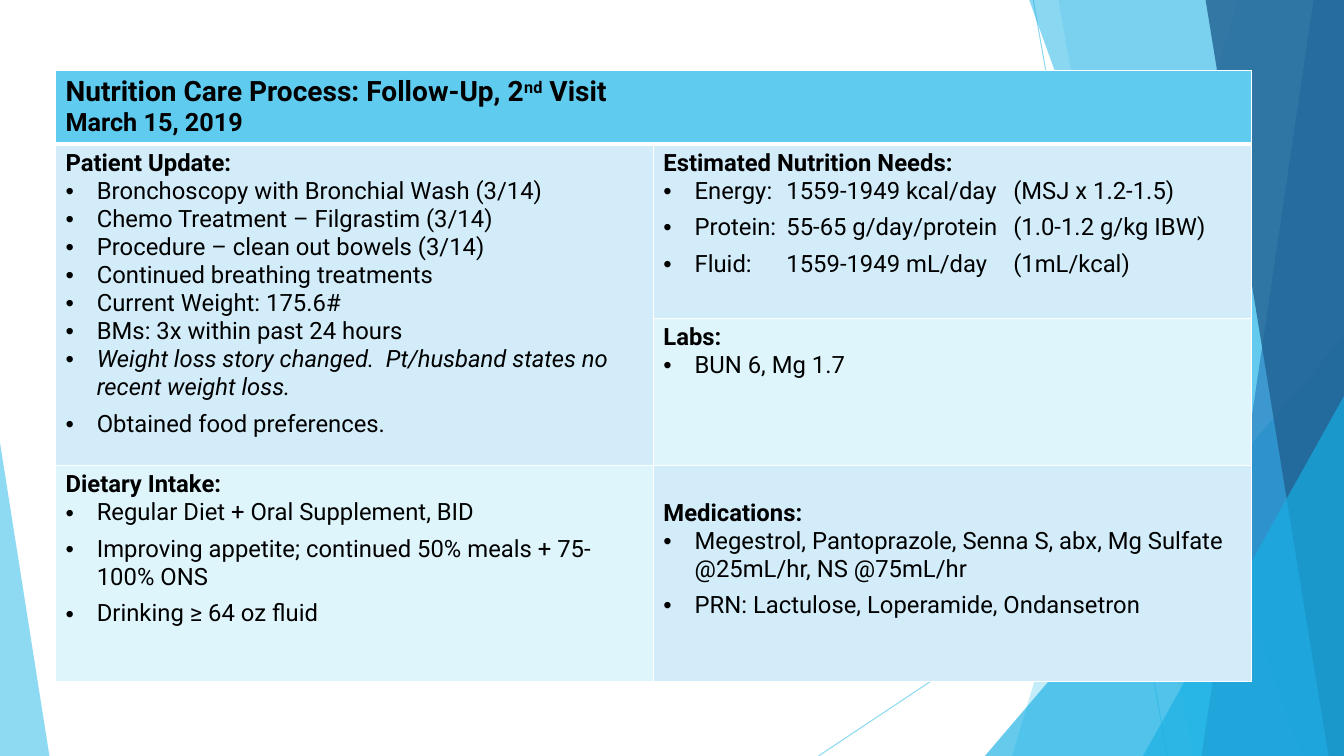
from lxml import etree
from pptx import Presentation
from pptx.dml.color import RGBColor
from pptx.enum.shapes import MSO_CONNECTOR, MSO_SHAPE
from pptx.oxml.ns import qn
from pptx.util import Inches, Pt

STRAIGHT = MSO_CONNECTOR.STRAIGHT
TRIANGLE = MSO_SHAPE.ISOSCELES_TRIANGLE
SLIDE_WIDTH, SLIDE_HEIGHT = Inches(13.33), Inches(7.5)
FONT = "Roboto"
BODY_SIZE = 17
BULLET_INDENT = Inches(0.31)
COLORS = {
    "sky": "5FCBEF", "azure": "17B0E4", "blue": "2E83C3", "navy": "226292",
    "pale": "D2ECF9", "paler": "DFF5FC", "white": "FFFFFF", "black": "000000",
}
RAYS = [((76.88, 0), (86.85, 100)), ((100, 53.73), (60.9, 100))]
FACETS = [
    ("band", (92.1, 100, 100, 75.3), "sky", 36),
    ("band", (78.75, 100, 100, 88.73), "sky", 20),
    ("triangle", (73.28, 44.4, 26.72, 55.6, 1), "azure", 66),
    ("band", (76.58, 100, 100, 96.83), "azure", 50),
    ("band", (97.73, 100, 100, 89.4), "blue", 70),
    ("band", (89.7, 100, 100, 98.85), "navy", 80),
    ("triangle", (85.05, 52.4, 14.95, 47.6, 1), "azure", 66),
    ("triangle", (0, 58.53, 3.68, 41.47, 0), "sky", 70),
]
TABLE_LEFT, TABLE_TOP, COLUMN_WIDTH = 4.13, 9.33, 44.48
ROW_HEIGHTS = [9.73, 23.07, 19.47, 28.53]
UPDATES = [
    "Bronchoscopy with Bronchial Wash (3/14)",
    "Chemo Treatment – Filgrastim (3/14)",
    "Procedure – clean out bowels (3/14)",
    "Continued breathing treatments",
    "Current Weight: 175.6#",
    "BMs: 3x within past 24 hours",
]
STORY = "Weight loss story changed.  Pt/husband states no recent weight loss."
NEEDS = [
    "Energy:\t1559-1949 kcal/day\t(MSJ x 1.2-1.5)",
    "Protein:\t55-65 g/day/protein\t(1.0-1.2 g/kg IBW)",
    "Fluid:\t1559-1949 mL/day\t(1mL/kcal)",
]
NEEDS_TABS = (1.22, 3.47)
INTAKE = [
    "Regular Diet + Oral Supplement, BID",
    "Improving appetite; continued 50% meals + 75-100% ONS",
    "Drinking ≥ 64 oz fluid",
]
MEDICATIONS = [
    "Megestrol, Pantoprazole, Senna S, abx, Mg Sulfate @25mL/hr, NS @75mL/hr",
    "PRN: Lactulose, Loperamide, Ondansetron",
]


def across(percent):
    """Return a share of the slide's width."""
    return round(SLIDE_WIDTH * percent / 100)


def down(percent):
    """Return a share of the slide's height."""
    return round(SLIDE_HEIGHT * percent / 100)


def rgb(name):
    """Return a named colour."""
    return RGBColor.from_string(COLORS[name])


def set_alpha(color_parent, percent):
    """Make the solid colour below an element partly transparent."""
    color = next(color_parent.iter(qn("a:srgbClr")))
    etree.SubElement(color, qn("a:alpha")).set("val", str(percent * 1000))


def add_ray(slide, start, end):
    """Draw a thin translucent line between two points."""
    ray = slide.shapes.add_connector(
        STRAIGHT, across(start[0]), down(start[1]), across(end[0]), down(end[1]))
    ray.line.color.rgb = rgb("sky")
    ray.line.width = Pt(0.75)
    properties = ray._element.spPr
    set_alpha(properties, 70)
    etree.SubElement(properties, qn("a:effectLst"))


def add_band(slide, top_left, top_right, bottom_right, bottom_left):
    """Draw a four-sided band over the full height of the slide."""
    builder = slide.shapes.build_freeform(across(top_left), 0, scale=1.0)
    builder.add_line_segments([
        (across(top_right), 0), (across(bottom_right), SLIDE_HEIGHT),
        (across(bottom_left), SLIDE_HEIGHT)], close=True)
    return builder.convert_to_shape()


def add_triangle(slide, left, top, width, height, apex):
    """Draw a triangle with its apex at a share of its width."""
    shape = slide.shapes.add_shape(
        TRIANGLE, across(left), down(top), across(width), down(height))
    shape.adjustments[0] = apex
    return shape


def add_facet(slide, kind, geometry, color, opacity):
    """Draw one translucent facet of the backdrop."""
    draw = {"band": add_band, "triangle": add_triangle}[kind]
    shape = draw(slide, *geometry)
    shape.shadow.inherit = False
    shape.fill.solid()
    shape.fill.fore_color.rgb = rgb(color)
    set_alpha(shape._element.spPr, opacity)
    shape.line.fill.background()


def add_run(paragraph, text, size=BODY_SIZE, bold=False, italic=False, raised=False):
    """Append formatted text to a paragraph."""
    run = paragraph.add_run()
    run.text = text
    run.font.name = FONT
    run.font.size = Pt(size)
    run.font.bold = bold
    run.font.italic = italic
    run.font.color.rgb = rgb("black")
    if raised:
        run._r.get_or_add_rPr().set("baseline", "30000")


def add_bullet(cell, text, space_after=6, italic=False, tabs=()):
    """Append a bulleted paragraph to a cell."""
    paragraph = cell.text_frame.add_paragraph()
    paragraph.space_after = Pt(space_after)
    properties = paragraph._p.get_or_add_pPr()
    properties.set("marL", str(BULLET_INDENT))
    properties.set("indent", str(-BULLET_INDENT))
    etree.SubElement(properties, qn("a:buFont")).set("typeface", "Arial")
    etree.SubElement(properties, qn("a:buChar")).set("char", "•")
    if tabs:
        stops = etree.SubElement(properties, qn("a:tabLst"))
        for position in tabs:
            etree.SubElement(
                stops, qn("a:tab"), pos=str(Inches(position)), algn="l")
    add_run(paragraph, text, italic=italic)


def style_cell(cell, color, bottom=1):
    """Give a cell white borders and a plain fill."""
    properties = cell._tc.get_or_add_tcPr()
    for side, width in (("L", 1), ("R", 1), ("T", 1), ("B", bottom)):
        border = etree.SubElement(properties, qn("a:ln" + side), w=str(Pt(width)))
        fill = etree.SubElement(border, qn("a:solidFill"))
        etree.SubElement(fill, qn("a:srgbClr")).set("val", COLORS["white"])
    cell.fill.solid()
    cell.fill.fore_color.rgb = rgb(color)


def fill_section(cell, heading, items, **bullet_format):
    """Write a bold heading and its bullets into a cell."""
    add_run(cell.text_frame.paragraphs[0], heading, bold=True)
    for item in items:
        add_bullet(cell, item, **bullet_format)


def fill_header(cell):
    """Write the visit's title and date into the header cell."""
    paragraph = cell.text_frame.paragraphs[0]
    add_run(paragraph, "Nutrition Care Process: Follow-Up, 2", size=20, bold=True)
    add_run(paragraph, "nd", size=20, bold=True, raised=True)
    add_run(paragraph, " Visit", size=20, bold=True)
    paragraph.add_line_break()
    add_run(paragraph, "March 15, 2019", size=18, bold=True)


def add_care_table(slide):
    """Build the table of the follow-up visit."""
    table = slide.shapes.add_table(
        len(ROW_HEIGHTS), 2, across(TABLE_LEFT), down(TABLE_TOP),
        across(2 * COLUMN_WIDTH), down(sum(ROW_HEIGHTS))).table
    for row, height in zip(table.rows, ROW_HEIGHTS):
        row.height = down(height)
    row_colors = [("sky", "sky"), ("pale", "pale"), ("pale", "paler"), ("paler", "pale")]
    for row, colors in enumerate(row_colors):
        for column, color in enumerate(colors):
            style_cell(table.cell(row, column), color, bottom=1 if row else 3)
    table.cell(0, 0).merge(table.cell(0, 1))
    table.cell(1, 0).merge(table.cell(2, 0))
    fill_header(table.cell(0, 0))
    update = table.cell(1, 0)
    fill_section(update, "Patient Update:", UPDATES, space_after=0)
    add_bullet(update, STORY, italic=True)
    add_bullet(update, "Obtained food preferences.")
    fill_section(table.cell(1, 1), "Estimated Nutrition Needs:", NEEDS, tabs=NEEDS_TABS)
    fill_section(table.cell(2, 1), "Labs:", ["BUN 6, Mg 1.7"], space_after=0)
    fill_section(table.cell(3, 0), "Dietary Intake:", INTAKE)
    medications = table.cell(3, 1)
    medications.margin_top = Inches(0.33)
    fill_section(medications, "Medications:", MEDICATIONS)


def main():
    """Build and save the slide."""
    presentation = Presentation()
    presentation.slide_width, presentation.slide_height = SLIDE_WIDTH, SLIDE_HEIGHT
    slide = presentation.slides.add_slide(presentation.slide_layouts[6])
    for start, end in RAYS:
        add_ray(slide, start, end)
    for facet in FACETS:
        add_facet(slide, *facet)
    add_care_table(slide)
    presentation.save("out.pptx")


if __name__ == "__main__":
    main()
